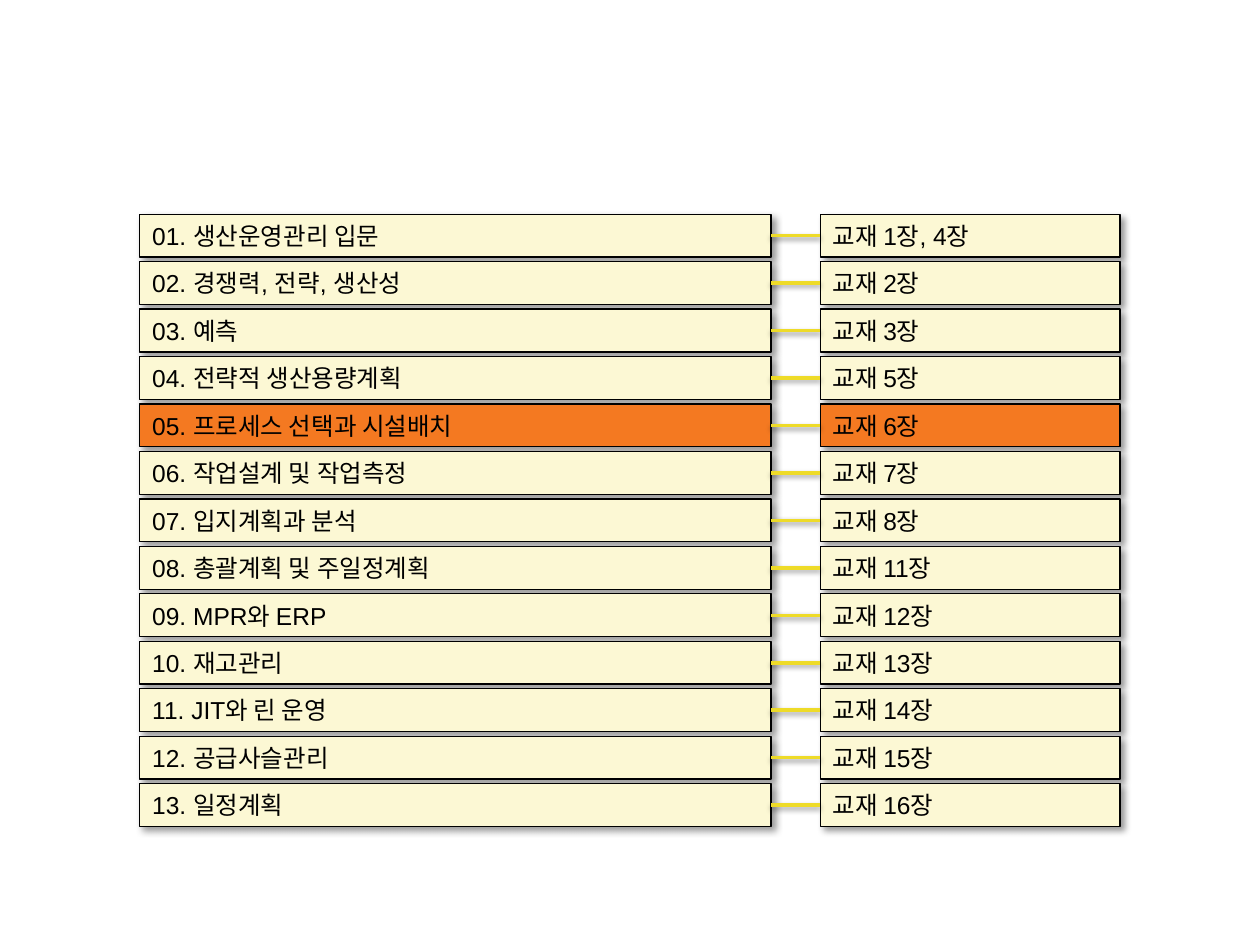
from lxml import etree
from pptx import Presentation
from pptx import util as u
from pptx.dml.color import RGBColor
from pptx.enum import shapes, text
from pptx.oxml.ns import qn

COLORS = {"cream": "FCF8D4", "orange": "F47921", "yellow": "EEDB28", "black": "000000"}
ROWS = [
    ("01. 생산운영관리 입문", "교재 1장, 4장"),
    ("02. 경쟁력, 전략, 생산성", "교재 2장"),
    ("03. 예측", "교재 3장"),
    ("04. 전략적 생산용량계획", "교재 5장"),
    ("05. 프로세스 선택과 시설배치", "교재 6장"),
    ("06. 작업설계 및 작업측정", "교재 7장"),
    ("07. 입지계획과 분석", "교재 8장"),
    ("08. 총괄계획 및 주일정계획", "교재 11장"),
    ("09. MPR와 ERP", "교재 12장"),
    ("10. 재고관리", "교재 13장"),
    ("11. JIT와 린 운영", "교재 14장"),
    ("12. 공급사슬관리", "교재 15장"),
    ("13. 일정계획", "교재 16장"),
]
CURRENT = 4
COLUMNS = [(1.11, 5.01), (6.51, 2.38)]
TOP, BOTTOM, HEIGHT = 1.7, 6.22, 0.34
PITCH = (BOTTOM - TOP) / (len(ROWS) - 1)


def add_shadow(sp, blur, dist, angle, alpha):
    effects = etree.SubElement(sp._element.spPr, qn("a:effectLst"))
    shadow = etree.SubElement(
        effects, qn("a:outerShdw"), blurRad=str(u.Pt(blur)), dist=str(u.Pt(dist)),
        dir=str(angle * 60000), algn="tl", rotWithShape="0")
    color = etree.SubElement(shadow, qn("a:srgbClr"), val=COLORS["black"])
    etree.SubElement(color, qn("a:alpha"), val=str(alpha * 1000))


def add_box(s, words, left, top, width, fill="cream", size=14, font="Arial"):
    sp = s.shapes.add_shape(
        shapes.MSO_SHAPE.RECTANGLE,
        u.Inches(left), u.Inches(top), u.Inches(width), u.Inches(HEIGHT))
    sp.fill.solid()
    sp.fill.fore_color.rgb = RGBColor.from_string(COLORS[fill])
    sp.line.color.rgb = RGBColor.from_string(COLORS["black"])
    sp.line.width = u.Pt(0.75)
    add_shadow(sp, 4, 3, 45, 40)
    tf = sp.text_frame
    tf.word_wrap = True
    tf.auto_size = text.MSO_AUTO_SIZE.SHAPE_TO_FIT_TEXT
    tf.vertical_anchor = text.MSO_ANCHOR.MIDDLE
    p = tf.paragraphs[0]
    p.alignment = text.PP_ALIGN.LEFT
    r = p.add_run()
    r.text = words
    r.font.size = u.Pt(size)
    r.font.name = font
    r.font.color.rgb = RGBColor.from_string(COLORS["black"])
    return sp


prs = Presentation()
prs.slide_width, prs.slide_height = u.Inches(10), u.Inches(7.5)
s = prs.slides.add_slide(prs.slide_layouts[6])

for i, row in enumerate(ROWS):
    fill = "orange" if i == CURRENT else "cream"
    topic, chapter = [
        add_box(s, words, left, TOP + i * PITCH, width, fill=fill)
        for words, (left, width) in zip(row, COLUMNS)]
    link = s.shapes.add_connector(shapes.MSO_CONNECTOR.STRAIGHT, 0, 0, 0, 0)
    link.begin_connect(topic, 3)
    link.end_connect(chapter, 1)
    link.line.color.rgb = RGBColor.from_string(COLORS["yellow"])
    link.line.width = u.Pt(2)
    add_shadow(link, 3.1, 1.6, 90, 38)

prs.save("out.pptx")
